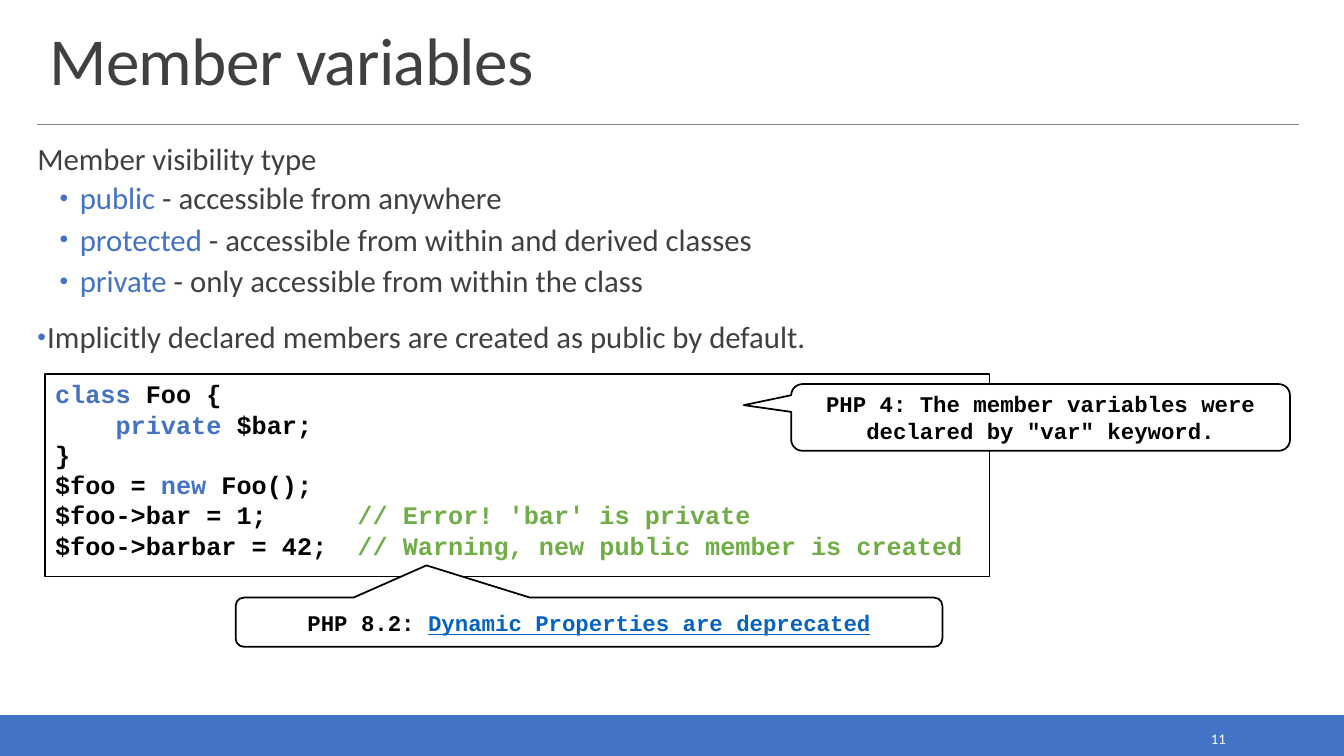
from lxml import etree
from pptx import Presentation
from pptx import util as u
from pptx.dml.color import RGBColor
from pptx.enum import shapes, text
from pptx.oxml.ns import qn

# Content: every paragraph is a list of (text, colour) runs
TITLE = [("Member variables", "grey")]
BODY = [
    ("plain", [("Member visibility type", "grey")]),
    ("sub", [("public", "blue"), (" - accessible from anywhere", "grey")]),
    ("sub", [("protected", "blue"),
             (" - accessible from within and derived classes", "grey")]),
    ("sub", [("private", "blue"),
             (" - only accessible from within the class", "grey")]),
    ("main", [("Implicitly declared members are created as public by default.",
               "grey")]),
]
CODE = [  # (indent in characters, runs)
    (0, [("class", "blue"), (" Foo {", "black")]),
    (4, [("private", "blue"), (" $bar;", "black")]),
    (0, [("}", "black")]),
    (0, [("$foo = ", "black"), ("new", "blue"), (" Foo();", "black")]),
    (0, [("$foo->bar = 1;\t", "black"),
         ("// Error! 'bar' is private", "green")]),
    (0, [("$foo->barbar = 42;\t", "black"),
         ("// Warning, new public member is created", "green")]),
]
CALLOUTS = [  # (left, top, width, height), pointer, runs
    ((19.94, 9.68, 12.57, 1.68), (-0.595, -0.184),
     [('PHP 4: The member variables were declared by "var" keyword.', "black")]),
    ((5.94, 15.06, 17.81, 1.24), (-0.23, -1.155),
     [("PHP 8.2: ", "black"), ("Dynamic Properties are deprecated", "link")]),
]
PAGE = [("11", "white")]

COLORS = {"blue": "4472C4", "grey": "404040", "rule": "808080",
          "green": "70AD47", "link": "0563C1", "black": "000000",
          "white": "FFFFFF"}
SANS, MONO = "Calibri", "Courier New"
CHAR = 0.381      # width of one 18 pt code character, cm
COMMENT_COL = 20  # column where code comments start
# style: level, left margin, first-line indent (cm), space before, after (pt)
STYLES = {"plain": (0, 0, 0, 12, 2),
          "sub": (1, 1.07, -0.51, 2, 4),
          "main": (0, 0.25, -0.25, 12, 2)}


def rgb(name):
    return RGBColor.from_string(COLORS[name])


def cm(box):
    return [u.Cm(v) for v in box]


def place(s, box):
    s.left, s.top, s.width, s.height = cm(box)


def write(p, runs, font, size, bold=False, align=text.PP_ALIGN.LEFT):
    p.alignment = align
    for words, color in runs:
        r = p.add_run()
        r.text = words
        r.font.name, r.font.size, r.font.bold = font, u.Pt(size), bold
        r.font.color.rgb = rgb(color)
        if color == "link":
            r.font.underline = True


def paragraphs(tf, count):
    return [tf.paragraphs[0]] + [tf.add_paragraph() for _ in range(count - 1)]


def shape(sl, kind, box, fill, line):
    s = sl.shapes.add_shape(kind, *cm(box))
    s.shadow.inherit = False
    if fill:
        s.fill.solid()
        s.fill.fore_color.rgb = rgb(fill)
    else:
        s.fill.background()
    s.line.color.rgb = rgb(line)
    s.line.width = u.Pt(1.25)
    s.text_frame.word_wrap = True
    return s


def bullet(p, shown):
    pPr = p._p.get_or_add_pPr()
    if not shown:
        etree.SubElement(pPr, qn("a:buNone"))
        return
    clr = etree.SubElement(pPr, qn("a:buClr"))
    etree.SubElement(clr, qn("a:srgbClr"), val=COLORS["blue"])
    etree.SubElement(pPr, qn("a:buSzPct"), val="80000")
    etree.SubElement(pPr, qn("a:buChar"), char="•")


def main():
    prs = Presentation()
    prs.slide_width, prs.slide_height = u.Cm(33.87), u.Cm(19.05)
    sl = prs.slides.add_slide(prs.slide_layouts[1])

    # Footer bar and rule under the title
    shape(sl, shapes.MSO_SHAPE.RECTANGLE, (0, 18.03, 33.87, 1.02), "blue", "blue")
    rule = sl.shapes.add_connector(shapes.MSO_CONNECTOR.STRAIGHT,
                                   *cm((0.94, 3.13, 32.74, 3.13)))
    rule.line.color.rgb = rgb("rule")
    rule.line.width = u.Pt(0.5)
    etree.SubElement(rule._element.spPr, qn("a:effectLst"))

    # Title
    title = sl.shapes.title
    place(title, (0.99, 0.51, 31.8, 2.13))
    tf = title.text_frame
    tf.auto_size = text.MSO_AUTO_SIZE.NONE
    tf.vertical_anchor = text.MSO_ANCHOR.BOTTOM
    p = tf.paragraphs[0]
    p.line_spacing = 0.85
    write(p, TITLE, SANS, 48)
    p.runs[0]._r.get_or_add_rPr().set("spc", "-50")

    # Body list
    body = sl.placeholders[1]
    place(body, (0.94, 3.53, 31.8, 14))
    tf = body.text_frame
    tf.auto_size = text.MSO_AUTO_SIZE.NONE
    tf.vertical_anchor = text.MSO_ANCHOR.TOP
    tf.margin_left = tf.margin_right = 0
    tf.margin_top = tf.margin_bottom = u.Cm(0.1)
    for p, (style, runs) in zip(paragraphs(tf, len(BODY)), BODY):
        p.level, margin, indent, before, after = STYLES[style]
        p.line_spacing = 0.9
        p.space_before, p.space_after = u.Pt(before), u.Pt(after)
        pPr = p._p.get_or_add_pPr()
        pPr.set("marL", str(u.Cm(margin)))
        pPr.set("indent", str(u.Cm(indent)))
        bullet(p, style != "plain")
        write(p, runs, SANS, 22)

    # Slide number
    s = sl.shapes.add_textbox(*cm((27.51, 18.26, 3.63, 0.71)))
    tf = s.text_frame
    tf.word_wrap = True
    tf.vertical_anchor = text.MSO_ANCHOR.MIDDLE
    write(tf.paragraphs[0], PAGE, SANS, 10.5, align=text.PP_ALIGN.RIGHT)

    # Code box
    s = shape(sl, shapes.MSO_SHAPE.RECTANGLE, (1.14, 9.42, 23.8, 5.11),
              None, "black")
    tf = s.text_frame
    tf.vertical_anchor = text.MSO_ANCHOR.TOP
    for p, (chars, runs) in zip(paragraphs(tf, len(CODE)), CODE):
        pPr = p._p.get_or_add_pPr()
        pPr.set("marL", str(u.Cm(chars * CHAR)))
        tabs = etree.SubElement(pPr, qn("a:tabLst"))
        etree.SubElement(tabs, qn("a:tab"), algn="l",
                         pos=str(u.Cm(COMMENT_COL * CHAR)))
        write(p, runs, MONO, 18, bold=True)

    # Callouts
    for box, pointer, runs in CALLOUTS:
        s = shape(sl, shapes.MSO_SHAPE.ROUNDED_RECTANGULAR_CALLOUT, box,
                  "white", "black")
        s.adjustments[0], s.adjustments[1] = pointer
        tf = s.text_frame
        tf.vertical_anchor = text.MSO_ANCHOR.MIDDLE
        write(tf.paragraphs[0], runs, MONO, 16, bold=True,
              align=text.PP_ALIGN.CENTER)

    prs.save("out.pptx")


if __name__ == "__main__":
    main()
